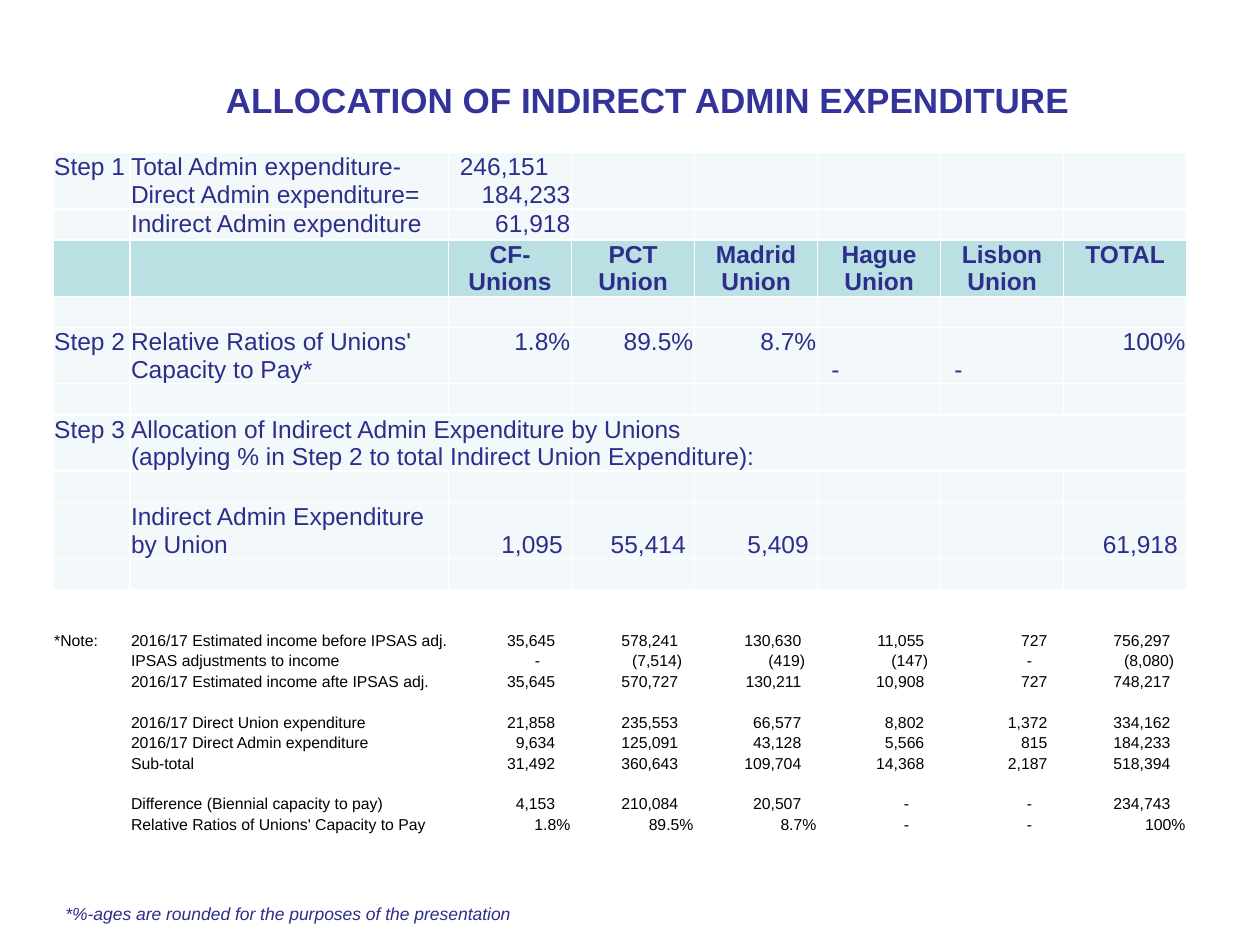
from lxml import etree
from pptx import Presentation
from pptx import util as u
from pptx.dml.color import RGBColor
from pptx.enum import text
from pptx.oxml import ns

NAVY = RGBColor(0x2D, 0x2D, 0x8A)
INDIGO = RGBColor(0x33, 0x33, 0x99)
BLACK = RGBColor(0, 0, 0)
WHITE = RGBColor(0xFF, 0xFF, 0xFF)
PALE = RGBColor(0xF3, 0xF9, 0xFA)
TEAL = RGBColor(0xBB, 0xE0, 0xE3)

LEFT, WIDE = 0.42, 9
STEP, LABEL, UNIONS = 0.61, 2.53, 6
COLS = [STEP, LABEL] + [(WIDE - STEP - LABEL) / UNIONS] * UNIONS
INSET = 0.01
ALIGN = text.PP_ALIGN

STEPS = [
    ["Step 1", "Total Admin expenditure-\nDirect Admin expenditure=", "246,151\n184,233"],
    ["", "Indirect Admin expenditure", "61,918"],
    ["", "", "CF-Unions", "PCT Union", "Madrid Union", "Hague Union", "Lisbon Union", "TOTAL"],
    [],
    ["Step 2", "Relative Ratios of Unions' Capacity to Pay*", "1.8%", "89.5%", "8.7%", "-", "-", "100%"],
    [],
    ["Step 3", "Allocation of Indirect Admin Expenditure by Unions\n"
               "(applying % in Step 2 to total Indirect Union Expenditure):"],
    [],
    ["", "Indirect Admin Expenditure by Union", "1,095", "55,414", "5,409", "", "", "61,918"],
    [],
]
HEAD, SPAN, RESULT = 2, 6, 8

NOTES = [
    ["*Note:", "2016/17 Estimated income before IPSAS adj.",
     "35,645", "578,241", "130,630", "11,055", "727", "756,297"],
    ["", "IPSAS adjustments to income", "-", "(7,514)", "(419)", "(147)", "-", "(8,080)"],
    ["", "2016/17 Estimated income afte IPSAS adj.",
     "35,645", "570,727", "130,211", "10,908", "727", "748,217"],
    [],
    ["", "2016/17 Direct Union expenditure", "21,858", "235,553", "66,577", "8,802", "1,372", "334,162"],
    ["", "2016/17 Direct Admin expenditure", "9,634", "125,091", "43,128", "5,566", "815", "184,233"],
    ["", "Sub-total", "31,492", "360,643", "109,704", "14,368", "2,187", "518,394"],
    [],
    ["", "Difference (Biennial capacity to pay)", "4,153", "210,084", "20,507", "-", "-", "234,743"],
    ["", "Relative Ratios of Unions' Capacity to Pay", "1.8%", "89.5%", "8.7%", "-", "-", "100%"],
]


def write(para, words, size, color, bold=False, italic=False):
    run = para.add_run()
    run.text = words
    font = run.font
    font.name, font.size = "Arial", u.Pt(size)
    font.bold, font.italic = bold, italic
    font.color.rgb = color


def fill_cell(cell, words, size, color, align=ALIGN.LEFT, bold=False, left=INSET, right=0):
    cell.margin_left, cell.margin_right = u.Inches(left), u.Inches(right)
    cell.margin_top, cell.margin_bottom = u.Inches(INSET), 0
    frame = cell.text_frame
    for i, line in enumerate(words.split("\n")):
        para = frame.add_paragraph() if i else frame.paragraphs[0]
        para.alignment = align
        if line:
            write(para, line, size, color, bold)
        else:
            end = etree.SubElement(para._p, ns.qn("a:endParaRPr"))
            end.set("sz", str(size * 100))


def edge(cell):
    props = cell._tc.get_or_add_tcPr()
    for side in ("lnL", "lnR", "lnT", "lnB"):
        line = etree.SubElement(props, ns.qn("a:" + side), w=str(u.Pt(1)))
        paint = etree.SubElement(line, ns.qn("a:solidFill"))
        etree.SubElement(paint, ns.qn("a:srgbClr"), val=str(WHITE))


def add_grid(slide, top, heights):
    frame = slide.shapes.add_table(
        len(heights), len(COLS), u.Inches(LEFT), u.Inches(top),
        u.Inches(WIDE), u.Inches(sum(heights)))
    grid = frame.table
    grid.first_row = grid.horz_banding = False
    for col, width in zip(grid.columns, COLS):
        col.width = u.Inches(width)
    for row, height in zip(grid.rows, heights):
        row.height = u.Inches(height)
    return grid


def add_steps(slide):
    tall, low = 0.44, 0.23
    grid = add_grid(slide, 1.21, [tall, low] * 5 if HEAD % 2 else
                    [tall, low, tall, low, tall, low, tall, low, tall, low])
    for r, row in enumerate(STEPS):
        for c in range(len(COLS)):
            cell = grid.cell(r, c)
            words = row[c] if c < len(row) else ""
            style = {}
            if c > 1:
                style = dict(align=ALIGN.RIGHT, right=INSET)
                if r == HEAD:
                    style.update(align=ALIGN.CENTER, bold=True)
                elif words == "-":
                    style = dict(left=0.11)
                elif r == RESULT:
                    style["right"] = 0.07
                if words == "-" or r == RESULT:
                    cell.vertical_anchor = text.MSO_ANCHOR.BOTTOM
            fill_cell(cell, words, 14, NAVY, **style)
            edge(cell)
            cell.fill.solid()
            cell.fill.fore_color.rgb = TEAL if r == HEAD else PALE
    first = grid.cell(0, 2).text_frame.paragraphs[0]
    first.alignment = ALIGN.LEFT
    first._p.get_or_add_pPr().set("marL", str(u.Inches(0.08)))
    grid.cell(SPAN, 1).merge(grid.cell(SPAN, len(COLS) - 1))


def pad(words):
    if words == "-":
        return 0.25
    return {"%": INSET, ")": 0.1}.get(words[-1:], 0.13)


def add_notes(slide):
    grid = add_grid(slide, 5.01, [0.16] * 9 + [0.62])
    for r, row in enumerate(NOTES):
        for c in range(len(COLS)):
            cell = grid.cell(r, c)
            words = row[c] if row else ""
            style = dict(align=ALIGN.RIGHT, right=pad(words)) if c > 1 else {}
            fill_cell(cell, words, 9, BLACK, **style)
            cell.fill.background()


def add_title(slide):
    title = slide.shapes.title
    title.left, title.top = u.Inches(1.07), u.Inches(0.57)
    title.width, title.height = u.Inches(8.14), u.Inches(0.44)
    para = title.text_frame.paragraphs[0]
    para.alignment = ALIGN.CENTER
    write(para, "ALLOCATION OF INDIRECT ADMIN EXPENDITURE", 20, INDIGO, bold=True)


def add_foot(slide):
    box = slide.shapes.add_textbox(u.Inches(LEFT), u.Inches(7.12), u.Inches(6.01), u.Inches(0.27))
    box.text_frame.word_wrap = True
    write(box.text_frame.paragraphs[0],
          "*%-ages are rounded for the purposes of the presentation", 10, NAVY, italic=True)


def main():
    deck = Presentation()
    deck.slide_width, deck.slide_height = u.Inches(10), u.Inches(7.5)
    slide = deck.slides.add_slide(deck.slide_layouts[5])
    add_steps(slide)
    add_title(slide)
    add_notes(slide)
    add_foot(slide)
    deck.save("out.pptx")


if __name__ == "__main__":
    main()
